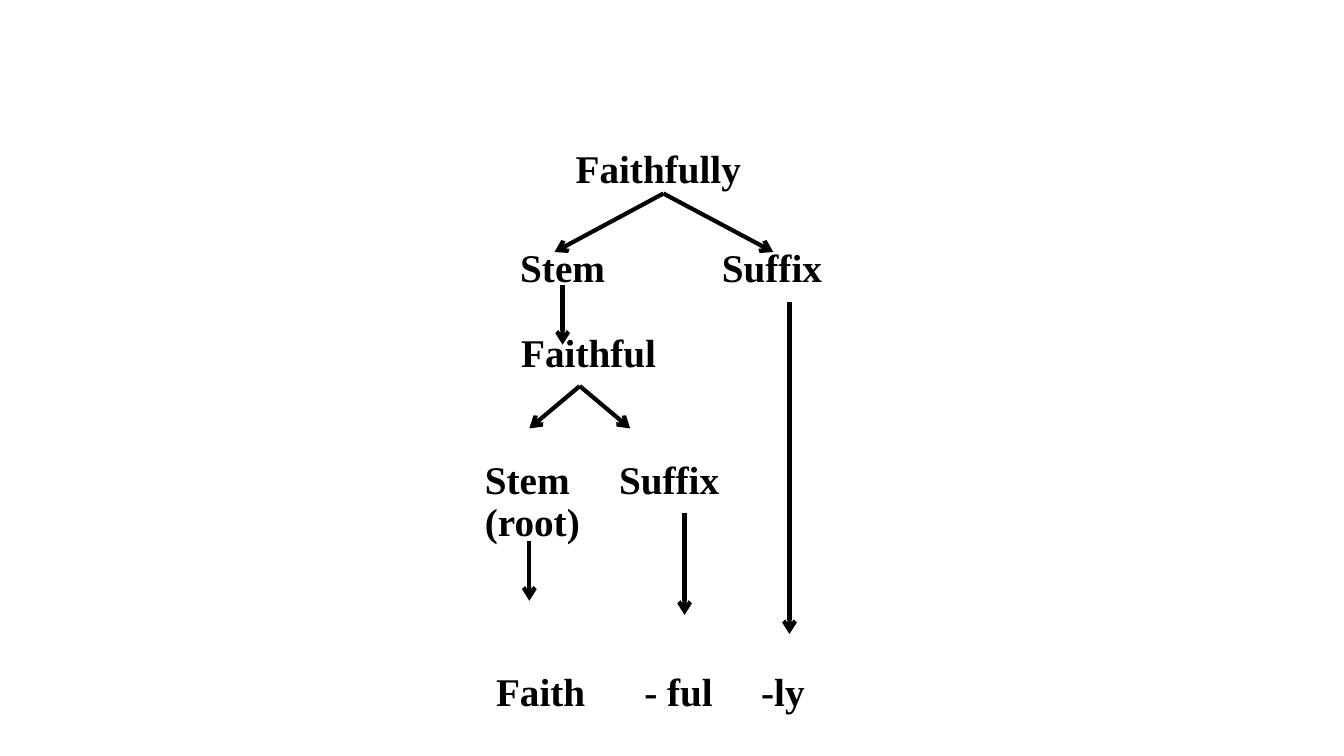
from lxml.etree import SubElement
from pptx import Presentation
from pptx.dml.color import RGBColor
from pptx.enum.shapes import MSO_CONNECTOR
from pptx.enum.text import MSO_ANCHOR, PP_ALIGN
from pptx.oxml.ns import qn
from pptx.util import Pt

PX = 9144  # 100 px to the inch
BLACK = RGBColor(0x00, 0x00, 0x00)
FONT = "Times New Roman"
LINE_HEIGHT = 42

# Words: lines, left, top, width within the tree
WORDS = [
    (["Faithfully"], 121, 8, 170),
    (["Stem"], 66, 107, 90),
    (["Suffix"], 266, 107, 105),
    (["Faithful"], 67, 191, 140),
    (["Stem", "(root)"], 31, 317, 100),
    (["Suffix"], 164, 317, 105),
    (["Faith"], 42, 527, 95),
    (["- ful"], 189, 527, 75),
    (["-ly"], 305, 527, 50),
]

# Branches: start and the ends reached from it
BRANCHES = [
    ((208, 52), [(100, 110), (317, 110)]),
    ((108, 143), [(108, 202)]),
    ((125, 243), [(75, 285), (175, 285)]),
    ((75, 397), [(75, 456)]),
    ((229, 369), [(229, 470)]),
    ((333, 160), [(333, 489)]),
]


def add_word(slide, lines, left, top, width):
    word = slide.shapes.add_textbox(
        left * PX, top * PX, width * PX, len(lines) * LINE_HEIGHT * PX)
    frame = word.text_frame
    frame.margin_left = frame.margin_right = 0
    frame.margin_top = frame.margin_bottom = 0
    frame.vertical_anchor = MSO_ANCHOR.TOP
    frame.word_wrap = True
    frame.text = "\n".join(lines)
    for paragraph in frame.paragraphs:
        paragraph.alignment = PP_ALIGN.LEFT
        paragraph.line_spacing = 0.9
        for run in paragraph.runs:
            run.font.name = FONT
            run.font.size = Pt(28)
            run.font.bold = True
            run.font.color.rgb = BLACK


def add_arrow(slide, x1, y1, x2, y2):
    arrow = slide.shapes.add_connector(
        MSO_CONNECTOR.STRAIGHT, x1 * PX, y1 * PX, x2 * PX, y2 * PX)
    arrow.line.color.rgb = BLACK
    arrow.line.width = Pt(3)
    SubElement(arrow.line._get_or_add_ln(), qn("a:tailEnd"), type="arrow")
    SubElement(arrow._element.spPr, qn("a:effectLst"))


def add_word_tree(slide, left, top):
    for lines, x, y, width in WORDS:
        add_word(slide, lines, left + x, top + y, width)
    for (x1, y1), ends in BRANCHES:
        for x2, y2 in ends:
            add_arrow(slide, left + x1, top + y1, left + x2, top + y2)


def main():
    deck = Presentation()
    deck.slide_width = 1333 * PX
    deck.slide_height = 750 * PX
    slide = deck.slides.add_slide(deck.slide_layouts[6])
    add_word_tree(slide, 450, 140)
    deck.save("out.pptx")


if __name__ == "__main__":
    main()
